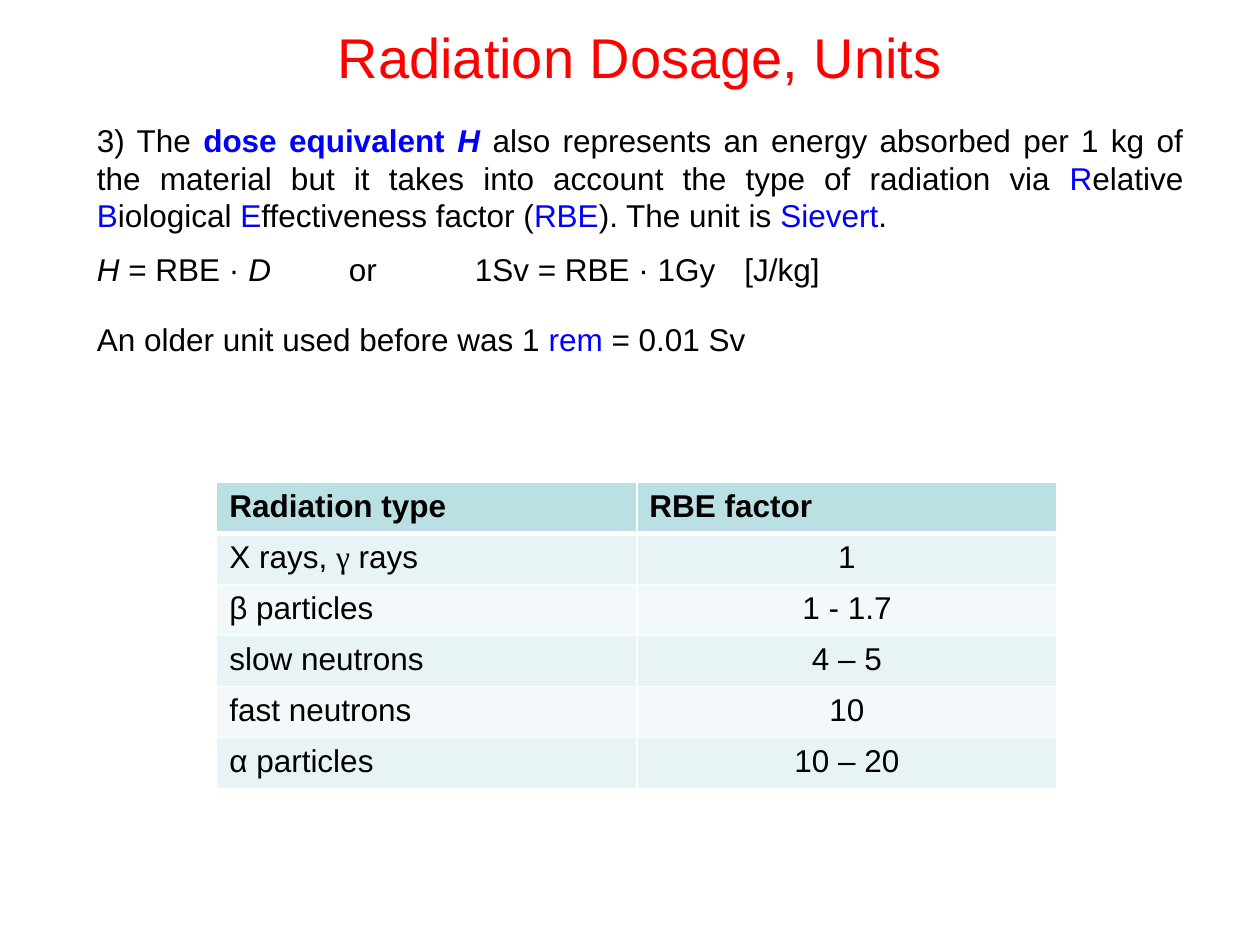
from dataclasses import dataclass

from lxml.etree import SubElement
from pptx import Presentation
from pptx.dml.color import RGBColor
from pptx.enum.text import MSO_ANCHOR, PP_ALIGN
from pptx.oxml.ns import qn
from pptx.util import Inches, Pt

BLACK, BLUE, RED, WHITE = "000000", "0000FF", "FF0000", "FFFFFF"
HEAD, BANDS = "BBE0E3", ("E7F3F4", "F3F9FA")


@dataclass(frozen=True)
class Bit:
    text: str
    color: str = BLACK
    bold: bool = False
    ital: bool = False
    font: str = ""


@dataclass(frozen=True)
class Para:
    bits: tuple[Bit, ...]
    align: PP_ALIGN = PP_ALIGN.JUSTIFY
    size: float = 18
    before: float = 0
    tabs: tuple[float, ...] = ()


@dataclass(frozen=True)
class Box:
    left: float
    top: float
    width: float
    height: float
    paras: tuple[Para, ...]


def paint(target, color: str) -> None:
    target.rgb = RGBColor.from_string(color)


def write(par, item: Para) -> None:
    par.alignment = item.align
    par.space_before = Pt(item.before)
    if item.tabs:
        stops = SubElement(par._p.get_or_add_pPr(), qn("a:tabLst"))
        for stop in item.tabs:
            SubElement(stops, qn("a:tab"), pos=str(Inches(stop)), algn="l")
    par.font.name = "Arial"
    par.font.size = Pt(item.size)
    for bit in item.bits:
        run = par.add_run()
        run.text = bit.text
        paint(run.font.color, bit.color)
        if bit.bold:
            run.font.bold = True
        if bit.ital:
            run.font.italic = True
        if bit.font:
            run.font.name = bit.font


def add_box(slide, box: Box) -> None:
    shape = slide.shapes.add_textbox(
        Inches(box.left), Inches(box.top), Inches(box.width), Inches(box.height)
    )
    frame = shape.text_frame
    frame.word_wrap = True
    for i, item in enumerate(box.paras):
        write(frame.add_paragraph() if i else frame.paragraphs[0], item)


def edge(cell, side: str, width: float) -> None:
    line = SubElement(
        cell._tc.get_or_add_tcPr(), qn(f"a:ln{side}"), w=str(Pt(width))
    )
    fill = SubElement(line, qn("a:solidFill"))
    SubElement(fill, qn("a:srgbClr"), val=WHITE)


def add_grid(slide, rows: tuple[tuple[Para, Para], ...]) -> None:
    grid = slide.shapes.add_table(
        len(rows), 2, Inches(1.72), Inches(3.83), Inches(6.67), Inches(2.43)
    ).table
    for r, row in enumerate(rows):
        for c, item in enumerate(row):
            cell = grid.cell(r, c)
            cell.vertical_anchor = MSO_ANCHOR.TOP
            for side in "LRTB":
                thick = (r, side) in ((0, "B"), (1, "T"))
                edge(cell, side, 3 if thick else 1)
            cell.fill.solid()
            paint(cell.fill.fore_color, BANDS[(r - 1) % 2] if r else HEAD)
            write(cell.text_frame.paragraphs[0], item)


def entry(*bits: Bit) -> Para:
    return Para(bits, PP_ALIGN.LEFT)


def value(text: str) -> Para:
    return Para((Bit(text),), PP_ALIGN.CENTER)


TITLE = Para((Bit("Radiation Dosage, Units", RED),), PP_ALIGN.CENTER, 32)
DOSE = Para((
    Bit("3) The "),
    Bit("dose equivalent ", BLUE, bold=True),
    Bit("H ", BLUE, bold=True, ital=True),
    Bit("also represents an energy absorbed per 1 kg of the material "
        "but it takes into account the type of radiation via "),
    Bit("R", BLUE), Bit("elative "),
    Bit("B", BLUE), Bit("iological "),
    Bit("E", BLUE), Bit("ffectiveness factor ("),
    Bit("RBE", BLUE), Bit("). The unit is "),
    Bit("Sievert", BLUE), Bit(". "),
))
RULE = Para((
    Bit("H", ital=True), Bit(" = RBE · "), Bit("D", ital=True),
    Bit("\tor \t1Sv = RBE · 1Gy\t[J/kg]"),
), before=9, tabs=(2, 3, 5.14))
OLDER = Para((
    Bit("An older unit used before was 1 "), Bit("rem", BLUE), Bit(" = 0.01 Sv"),
))
BOXES = (
    Box(1.3, 0.13, 7.56, 0.64, (TITLE,)),
    Box(0.67, 0.91, 8.82, 1.46, (DOSE, RULE)),
    Box(0.67, 2.49, 8.82, 0.4, (OLDER,)),
)
ROWS = (
    (entry(Bit("Radiation type", bold=True)), entry(Bit("RBE factor", bold=True))),
    (entry(Bit("X rays, "), Bit("γ", font="Times New Roman"), Bit(" rays")),
     value("1")),
    (entry(Bit("β particles")), value("1 - 1.7")),
    (entry(Bit("slow neutrons")), value("4 – 5")),
    (entry(Bit("fast neutrons")), value("10")),
    (entry(Bit("α particles")), value("10 – 20")),
)


def main() -> None:
    deck = Presentation()
    deck.slide_width, deck.slide_height = Inches(10), Inches(7.5)
    slide = deck.slides.add_slide(deck.slide_layouts[6])
    for box in BOXES:
        add_box(slide, box)
    add_grid(slide, ROWS)
    deck.save("out.pptx")


if __name__ == "__main__":
    main()
